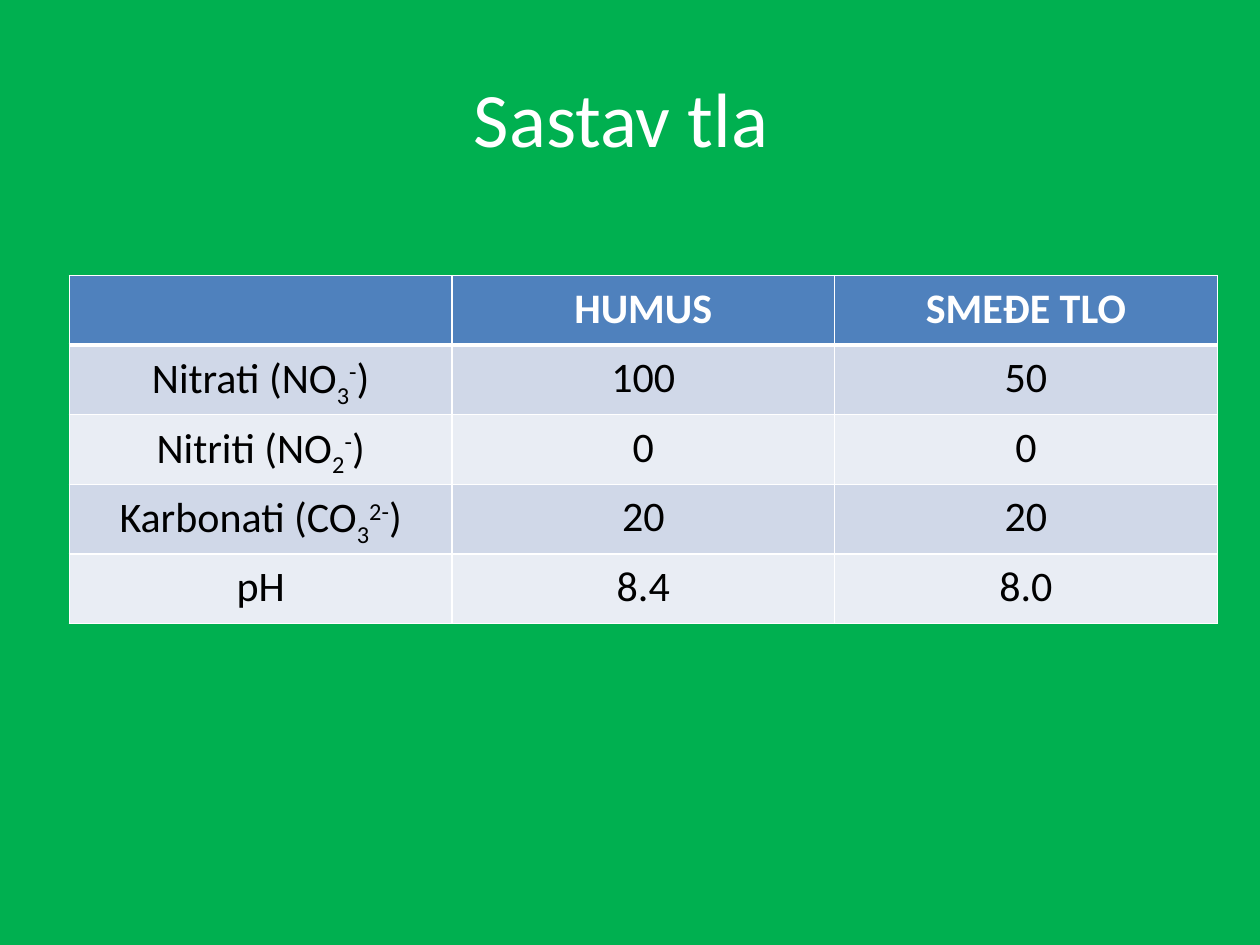
from lxml.etree import SubElement
from pptx import Presentation
from pptx.dml.color import RGBColor
from pptx.enum.text import MSO_ANCHOR, PP_ALIGN
from pptx.oxml.ns import qn
from pptx.util import Pt

COLORS = {
    "background": "00B050",
    "white": "FFFFFF",
    "black": "000000",
    "header": "4F81BD",
    "odd_row": "D0D8E8",
    "even_row": "E9EDF4",
}
FONT = "Calibri"
SUBSCRIPT, SUPERSCRIPT = -25000, 30000


def ion(name, formula, count, charge):
    """Runs of an ion label, each as text and baseline shift."""
    return [(f"{name} ({formula}", 0), (count, SUBSCRIPT), (charge, SUPERSCRIPT), (")", 0)]


def plain(text):
    return [(text, 0)] if text else []


ROWS = [
    [plain(""), plain("HUMUS"), plain("SMEĐE TLO")],
    [ion("Nitrati", "NO", "3", "-"), plain("100"), plain("50")],
    [ion("Nitriti", "NO", "2", "-"), plain("0"), plain("0")],
    [ion("Karbonati", "CO", "3", "2-"), plain("20"), plain("20")],
    [plain("pH"), plain("8.4"), plain("8.0")],
]


def color(name):
    return RGBColor.from_string(COLORS[name])


def add_run(para, text, size, color_name, bold=False, baseline=0):
    span = para.add_run()
    span.text = text
    span.font.name = FONT
    span.font.size = Pt(size)
    span.font.bold = bold
    span.font.color.rgb = color(color_name)
    if baseline:
        span.font._element.set("baseline", str(baseline))


def set_borders(cell, widths):
    """Draw white borders; widths maps a side (L, R, T, B) to points."""
    properties = cell._tc.get_or_add_tcPr()
    for side, width in widths.items():
        line = SubElement(properties, qn(f"a:ln{side}"), w=str(Pt(width)))
        fill = SubElement(line, qn("a:solidFill"))
        SubElement(fill, qn("a:srgbClr"), val=COLORS["white"])


def place_title(page, left, top, width, height):
    title = page.shapes.title
    title.left, title.top, title.width, title.height = left, top, width, height
    title.text_frame.vertical_anchor = MSO_ANCHOR.MIDDLE
    para = title.text_frame.paragraphs[0]
    para.alignment = PP_ALIGN.CENTER
    add_run(para, "Sastav tla ", 44, "white")


def fill_cell(cell, runs, row_index):
    is_header = row_index == 0
    set_borders(cell, {"L": 1, "R": 1, "T": 3 if row_index == 1 else 1, "B": 3 if is_header else 1})
    cell.fill.solid()
    band = "odd_row" if row_index % 2 else "even_row"
    cell.fill.fore_color.rgb = color("header" if is_header else band)
    cell.margin_left = cell.margin_right = Pt(5)
    cell.margin_top = cell.margin_bottom = Pt(0)
    para = cell.text_frame.paragraphs[0]
    para.alignment = PP_ALIGN.CENTER
    para.line_spacing = 1.15
    for text, baseline in runs:
        add_run(para, text, 24, "white" if is_header else "black", is_header, baseline)


def place_soil_table(page, left, top, width, height):
    frame = page.shapes.add_table(len(ROWS), len(ROWS[0]), left, top, width, height)
    for row_index, row in enumerate(ROWS):
        for column_index, runs in enumerate(row):
            fill_cell(frame.table.cell(row_index, column_index), runs, row_index)


def main():
    deck = Presentation()
    deck.slide_width, deck.slide_height = Pt(720), Pt(540)
    page = deck.slides.add_slide(deck.slide_layouts[5])
    page.background.fill.solid()
    page.background.fill.fore_color.rgb = color("background")
    place_title(page, Pt(36), Pt(21.6), Pt(648), Pt(90))
    place_soil_table(page, Pt(39.6), Pt(157.5), Pt(656), Pt(198.75))
    deck.save("out.pptx")


if __name__ == "__main__":
    main()
